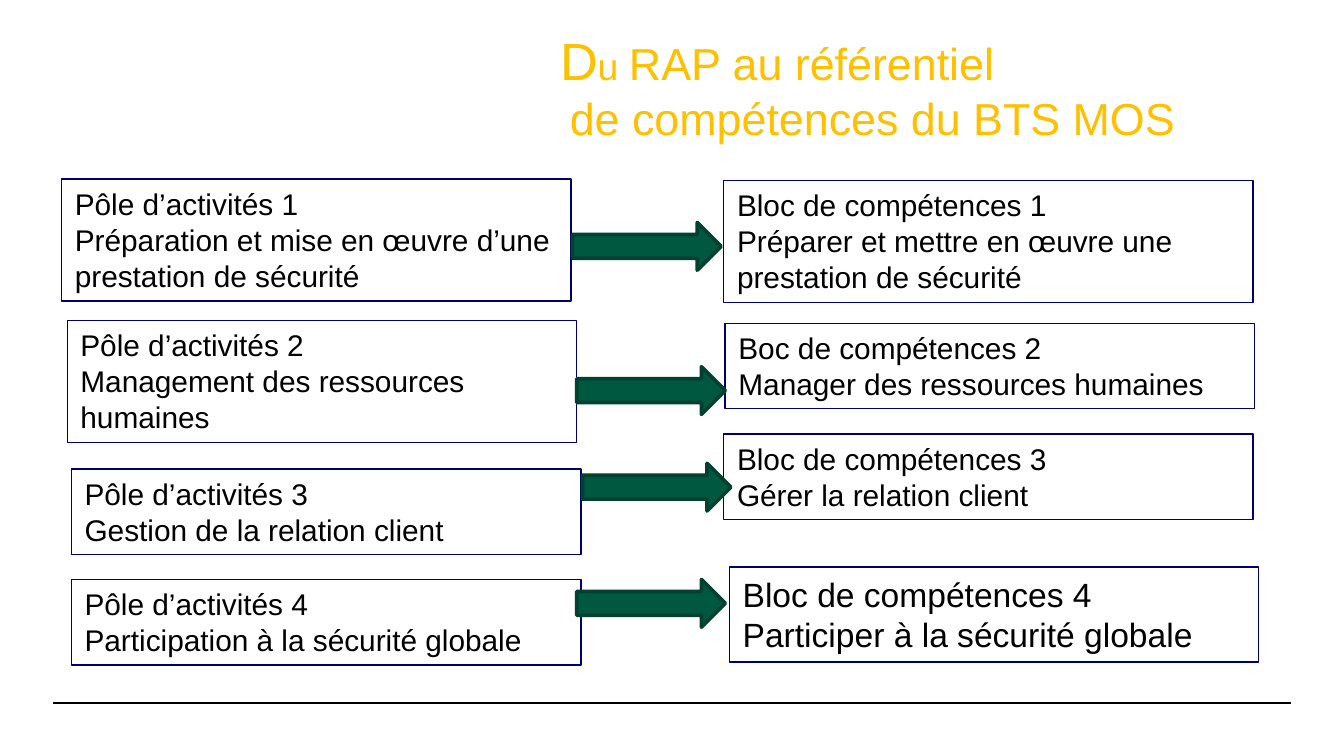
from dataclasses import dataclass

from lxml import etree
from pptx import Presentation
from pptx import util as u
from pptx.dml.color import RGBColor
from pptx.enum import shapes, text
from pptx.oxml.ns import qn

PX = 9525


@dataclass(frozen=True)
class Theme:
    font: str = "Arial"
    ink: str = "000000"
    gold: str = "FFC000"
    navy: str = "00006D"
    green: str = "005841"
    edge: str = "004130"
    body: int = 16
    large: int = 18
    head: int = 24
    small: int = 20
    cap: int = 28


class Deck:
    def __init__(self, theme, wide, high):
        self.theme = theme
        self.file = Presentation()
        self.file.slide_width, self.file.slide_height = self.emu(wide, high)
        self.slide = self.file.slides.add_slide(self.file.slide_layouts[5])

    def emu(self, *sizes):
        return [u.Emu(size * PX) for size in sizes]

    def style(self, font, size, color):
        font.name = self.theme.font
        font.size = u.Pt(size)
        font.color.rgb = RGBColor.from_string(color)

    def stroke(self, line, color, width):
        line.color.rgb = RGBColor.from_string(color)
        line.width = u.Pt(width)

    def title(self, rect, margin, indent, runs):
        shape = self.slide.shapes.title
        shape.left, shape.top, shape.width, shape.height = self.emu(*rect)
        frame = shape.text_frame
        frame.margin_left = frame.margin_right = 0
        frame.margin_top = frame.margin_bottom = 0
        frame.vertical_anchor = text.MSO_ANCHOR.TOP
        frame.auto_size = text.MSO_AUTO_SIZE.NONE
        frame.word_wrap = True
        para = frame.paragraphs[0]
        para.alignment = text.PP_ALIGN.LEFT
        props = para._p.get_or_add_pPr()
        props.set("marL", str(margin * PX))
        props.set("indent", str(indent * PX))
        for words, size in runs:
            if words == "\n":
                para.add_line_break()
                continue
            run = para.add_run()
            run.text = words
            self.style(run.font, size, self.theme.gold)

    def box(self, rect, lines, size):
        shape = self.slide.shapes.add_shape(
            shapes.MSO_SHAPE.RECTANGLE, *self.emu(*rect))
        shape.shadow.inherit = False
        shape.fill.background()
        self.stroke(shape.line, self.theme.navy, 0.75)
        frame = shape.text_frame
        frame.word_wrap = True
        frame.vertical_anchor = text.MSO_ANCHOR.TOP
        frame.auto_size = text.MSO_AUTO_SIZE.SHAPE_TO_FIT_TEXT
        for i, words in enumerate(lines):
            para = frame.add_paragraph() if i else frame.paragraphs[0]
            para.text = words
            para.alignment = text.PP_ALIGN.LEFT
            self.style(para.font, size, self.theme.ink)

    def arrow(self, left, top):
        shape = self.slide.shapes.add_shape(
            shapes.MSO_SHAPE.RIGHT_ARROW, *self.emu(left, top, 106, 34))
        shape.shadow.inherit = False
        shape.fill.solid()
        shape.fill.fore_color.rgb = RGBColor.from_string(self.theme.green)
        self.stroke(shape.line, self.theme.edge, 2)

    def rule(self, left, right, top):
        line = self.slide.shapes.add_connector(
            shapes.MSO_CONNECTOR.STRAIGHT, *self.emu(left, top, right, top))
        self.stroke(line.line, self.theme.ink, 0.8)
        etree.SubElement(line._element.spPr, qn("a:effectLst"))


def main():
    theme = Theme()
    deck = Deck(theme, 960, 540)
    deck.rule(38, 922, 502)
    deck.title((390, 20, 522, 107), 17, -7, [
        ("D", theme.cap), ("u ", theme.small),
        ("RAP au référentiel", theme.head), ("\n", theme.head),
        ("de compétences du BTS MOS", theme.head),
    ])

    poles = [
        (44, 128, 87, "Préparation et mise en œuvre d’une prestation de sécurité"),
        (48, 229, 87, "Management des ressources humaines"),
        (51, 335, 61, "Gestion de la relation client"),
        (51, 414, 61, "Participation à la sécurité globale"),
    ]
    for i, (left, top, high, words) in enumerate(poles, 1):
        deck.box((left, top, 364, high),
                 [f"Pôle d’activités {i}", words], theme.body)

    blocs = [
        (517, 129, 87, theme.body, "Bloc de compétences 1",
         "Préparer et mettre en œuvre une prestation de sécurité"),
        (518, 231, 61, theme.body, "Boc de compétences 2",
         "Manager des ressources humaines"),
        (517, 310, 61, theme.body, "Bloc de compétences 3",
         "Gérer la relation client"),
        (521, 405, 68, theme.large, "Bloc de compétences 4",
         "Participer à la sécurité globale"),
    ]
    for left, top, high, size, *lines in blocs:
        deck.box((left, top, 378, high), lines, size)

    for left, top in [(409, 159), (412, 262), (416, 331), (412, 414)]:
        deck.arrow(left, top)

    deck.file.save("out.pptx")


if __name__ == "__main__":
    main()
